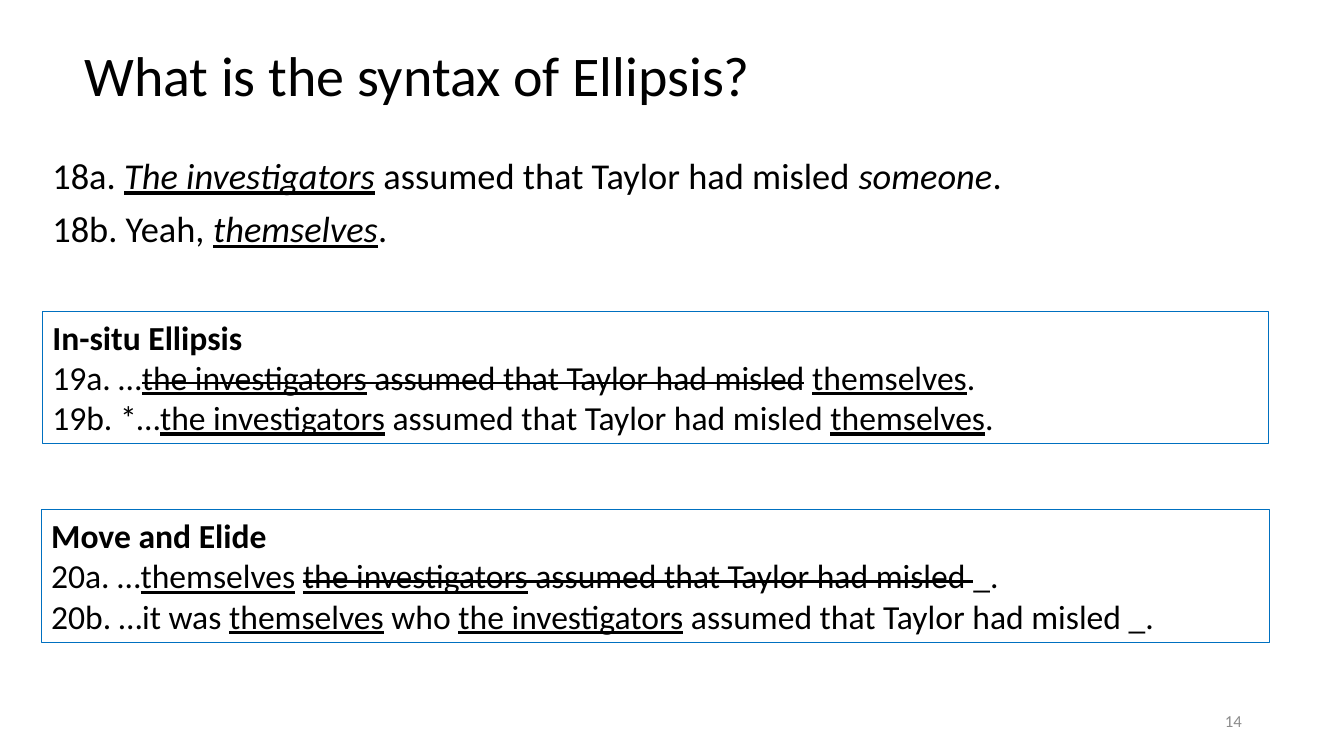
"""Builds the slide on the syntax of ellipsis."""
from pptx import Presentation, util as u
from pptx.dml.color import RGBColor as Rgb
from pptx.enum import shapes, text

THEME = {
    "font": "Calibri", "ink": Rgb(0, 0, 0), "gray": Rgb(0x8C, 0x8C, 0x8C),
    "rule": Rgb(0x00, 0x70, 0xC0), "edge": 0.75,
    "title": 40, "body": 26, "panel": 24, "page": 12,
}

TITLE = [[("What is the syntax of Ellipsis?", "")]]
PAGE = [[("14", "")]]
LINES = [
    [("18a. ", ""), ("The investigators", "iu"),
     (" assumed that Taylor had misled ", ""), ("someone", "i"), (".", "")],
    [("18b. Yeah, ", ""), ("themselves", "iu"), (".", "")],
]
MOVE = [
    [("Move and Elide", "b")],
    [("20a. …", ""), ("themselves", "u"), (" ", ""), ("the investigators", "us"),
     (" assumed that Taylor had misled ", "s"), ("_.", "")],
    [("20b. …it was ", ""), ("themselves", "u"), (" who ", ""),
     ("the investigators", "u"), (" assumed that Taylor had misled _.", "")],
]
SITU = [
    [("In-situ Ellipsis", "b")],
    [("19a. …", ""), ("the investigators", "us"),
     (" assumed that Taylor had misled", "s"), (" ", ""),
     ("themselves", "u"), (".", "")],
    [("19b. *…", ""), ("the investigators", "u"),
     (" assumed that Taylor had misled ", ""), ("themselves", "u"), (".", "")],
]
PANELS = [(MOVE, 1.04, 12.85, 30.96), (SITU, 1.07, 7.85, 30.91)]
TALL = 3.33


def write(box, lines, size, ink="ink", side=text.PP_ALIGN.LEFT,
          mid=False, lead=1.0, gap=0):
    frame = box.text_frame
    frame.word_wrap = True
    frame.vertical_anchor = text.MSO_ANCHOR.MIDDLE if mid else text.MSO_ANCHOR.TOP
    for row, parts in enumerate(lines):
        para = frame.add_paragraph() if row else frame.paragraphs[0]
        para.alignment = side
        para.line_spacing = lead
        para.space_before = u.Pt(gap)
        for words, style in parts:
            run = para.add_run()
            run.text = words
            font = run.font
            font.name = THEME["font"]
            font.size = u.Pt(THEME[size])
            font.color.rgb = THEME[ink]
            font.bold = "b" in style
            font.italic = "i" in style
            font.underline = "u" in style
            if "s" in style:
                run._r.get_or_add_rPr().set("strike", "sngStrike")


def label(slide, spot, lines, size, **look):
    box = slide.shapes.add_textbox(*map(u.Cm, spot))
    write(box, lines, size, **look)


def panel(slide, lines, left, top, wide):
    box = slide.shapes.add_shape(
        shapes.MSO_SHAPE.RECTANGLE, *map(u.Cm, (left, top, wide, TALL)))
    box.shadow.inherit = False
    box.fill.background()
    box.line.color.rgb = THEME["rule"]
    box.line.width = u.Pt(THEME["edge"])
    write(box, lines, "panel")
    box.text_frame.auto_size = text.MSO_AUTO_SIZE.SHAPE_TO_FIT_TEXT


def main():
    deck = Presentation()
    deck.slide_width, deck.slide_height = u.Cm(33.87), u.Cm(19.05)
    slide = deck.slides.add_slide(deck.slide_layouts[6])
    label(slide, (1.07, 3.86, 32.11, 13.79), LINES, "body", lead=0.9, gap=10)
    label(slide, (23.93, 17.65, 7.62, 1.02), PAGE, "page", ink="gray",
          side=text.PP_ALIGN.RIGHT, mid=True)
    label(slide, (1.88, 0.89, 30.12, 2.16), TITLE, "title", mid=True, lead=0.9)
    for spec_row in PANELS:
        panel(slide, *spec_row)
    deck.save("out.pptx")


if __name__ == "__main__":
    main()
